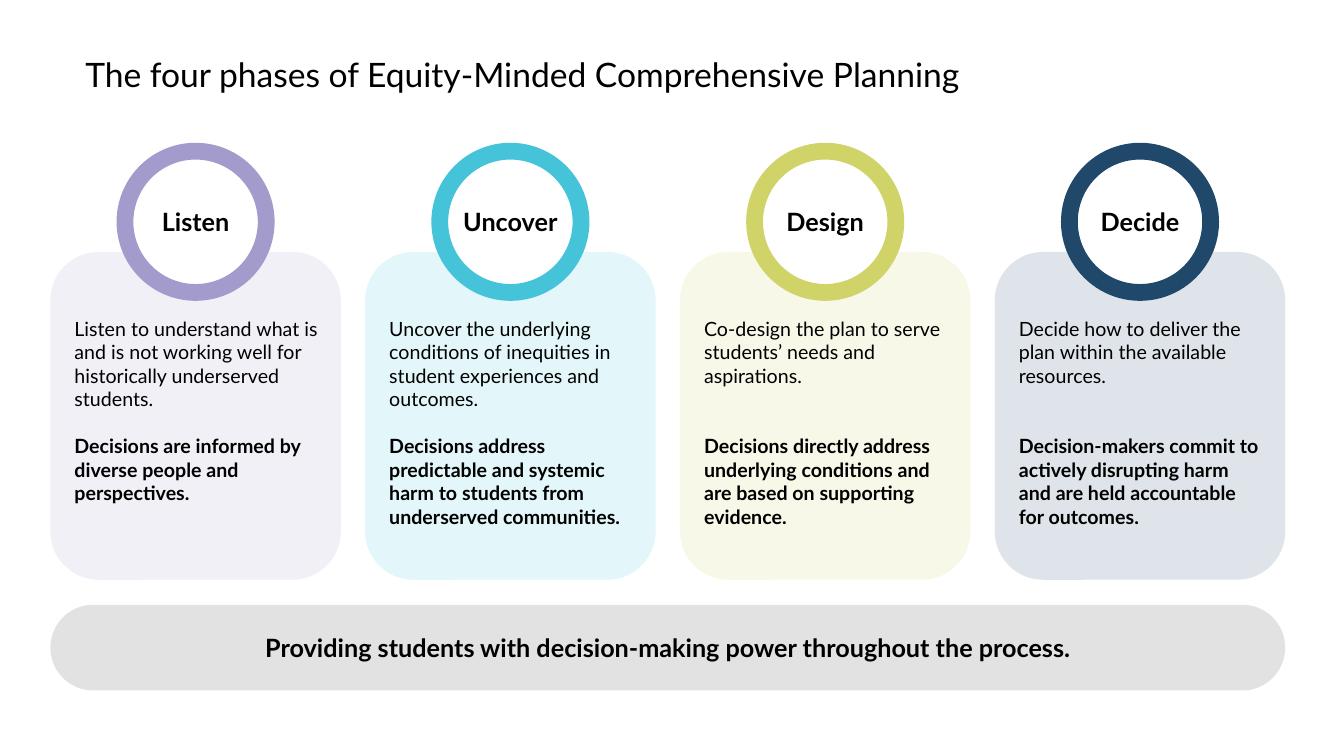
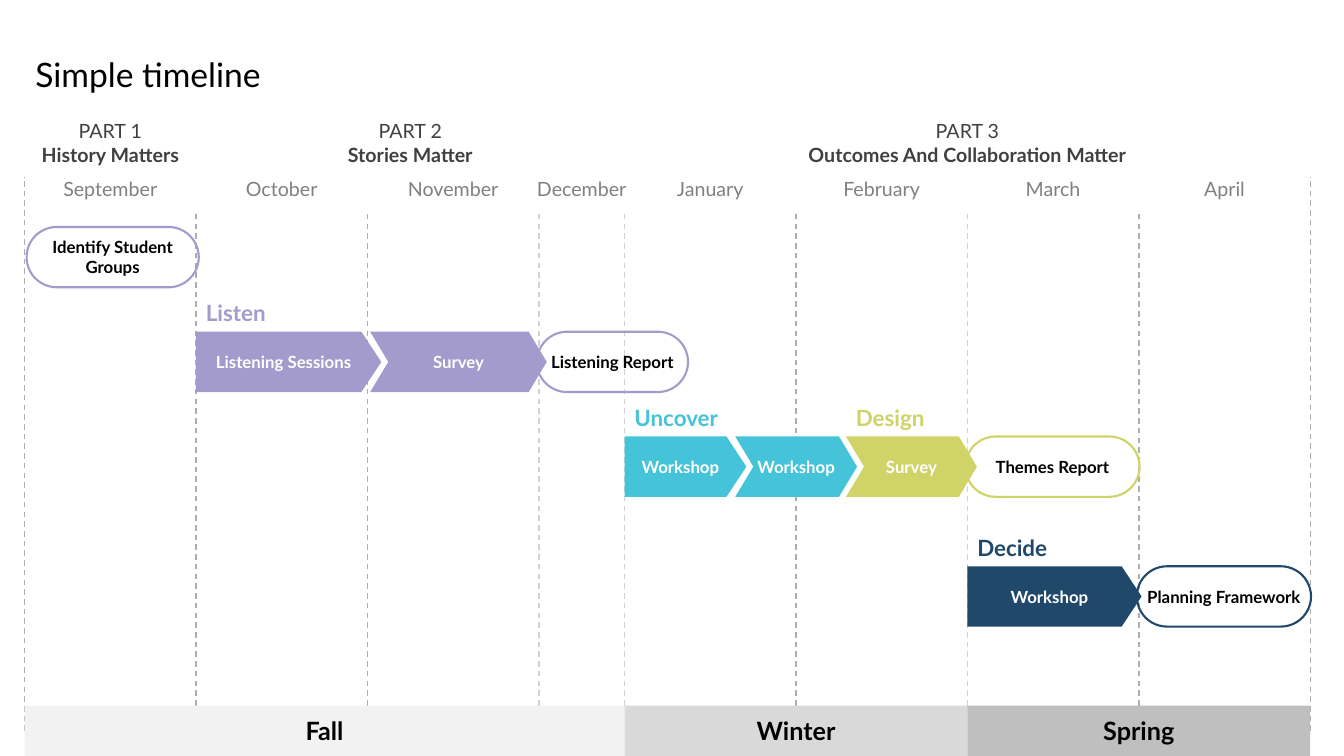
from itertools import accumulate

from lxml import etree
from pptx import Presentation
from pptx.dml.color import RGBColor
from pptx.enum.dml import MSO_LINE
from pptx.enum.shapes import MSO_CONNECTOR, MSO_SHAPE
from pptx.enum.text import MSO_ANCHOR, PP_ALIGN
from pptx.oxml.ns import qn
from pptx.util import Cm, Pt

RECTANGLE = MSO_SHAPE.RECTANGLE
ROUNDED = MSO_SHAPE.ROUNDED_RECTANGLE
ELLIPSE = MSO_SHAPE.OVAL
PENTAGON = MSO_SHAPE.PENTAGON
CHEVRON = MSO_SHAPE.CHEVRON
STRAIGHT = MSO_CONNECTOR.STRAIGHT
DASH = MSO_LINE.DASH
TOP, MIDDLE = MSO_ANCHOR.TOP, MSO_ANCHOR.MIDDLE
LEFT, CENTER = PP_ALIGN.LEFT, PP_ALIGN.CENTER

# Shared look: all lengths are centimetres
FONT = "Lato"
BLACK, WHITE = "000000", "FFFFFF"
HEADING_GREY, MONTH_GREY = "404040", "808080"
PHASE_COLOURS = {"Listen": "A29BCB", "Uncover": "45C3D8",
                 "Design": "CFD368", "Decide": "20486B"}
NO_INSETS = (0, 0, 0, 0)
USUAL_INSETS = (0.25, 0.13, 0.25, 0.13)

# Phase cards: name, fill, opacity, blank lines between texts, texts
CARDS = [
    ("Listen", "F1F0F7", 100, 1,
     "Listen to understand what is and is not working well for "
     "historically underserved students.",
     "Decisions are informed by diverse people and perspectives."),
    ("Uncover", "E3F6F9", 100, 1,
     "Uncover the underlying conditions of inequities in student "
     "experiences and outcomes.",
     "Decisions address predictable and systemic harm to students from "
     "underserved communities."),
    ("Design", "CFD368", 15, 2,
     "Co-design the plan to serve students’ needs and aspirations.",
     "Decisions directly address underlying conditions and are based on "
     "supporting evidence."),
    ("Decide", "DEE4E9", 100, 2,
     "Decide how to deliver the plan within the available resources.",
     "Decision-makers commit to actively disrupting harm and are held "
     "accountable for outcomes."),
]
CARD_TEXT_SIZE = 14
LINE_HEIGHT = 1.2 * CARD_TEXT_SIZE

# Timeline grid: a month is one column, December half of one
MONTHS = [("September", 1), ("October", 1), ("November", 1), ("December", 0.5),
          ("January", 1), ("February", 1), ("March", 1), ("April", 1)]
MONTH_WIDTH = 4.32
EDGES = list(accumulate((share * MONTH_WIDTH for _, share in MONTHS),
                        initial=0.62))
PALE_EDGES = (3, 4, 6)

# Spans run from one grid edge to another
PARTS = [("PART 1", "History Matters", 0, 1),
         ("PART 2", "Stories Matter", 1, 4),
         ("PART 3", "Outcomes And Collaboration Matter", 4, 8)]
SEASONS = [("Fall", "F2F2F2", 0, 4),
           ("Winter", "D9D9D9", 4, 6),
           ("Spring", "BFBFBF", 6, 8)]
SEASON_TOP, SEASON_HEIGHT = 17.78, 1.27

# Work rows: top, first edge, arrows (phase, text, width),
# report (text, edge, width)
ROWS = [
    (8.36, 1, [("Listen", "Listening Sessions", 4.67),
               ("Listen", "Survey", 4.45)],
     ("Listening Report", 3, 3.81)),
    (11, 4, [("Uncover", "Workshop", 3.07), ("Uncover", "Workshop", 3.07),
             ("Design", "Survey", 3.3)],
     ("Themes Report", 6, 4.39)),
    (14.27, 6, [("Decide", "Workshop", 4.39)],
     ("Planning Framework", 7, 4.39)),
]
STEP_HEIGHT = 1.52
ARROW_OVERLAP = 0.28
LABEL_HEIGHT = 0.94


def colour(value):
    return RGBColor.from_string(value)


def lengths(box):
    return [Cm(value) for value in box]


def write(shape, texts, size, text_colour=BLACK, bold=(True,), align=CENTER,
          anchor=MIDDLE, insets=NO_INSETS, gap=0):
    """Write one paragraph per text, with a gap in points between them."""
    frame = shape.text_frame
    frame.word_wrap = True
    frame.vertical_anchor = anchor
    (frame.margin_left, frame.margin_top,
     frame.margin_right, frame.margin_bottom) = lengths(insets)
    for number, (text, is_bold) in enumerate(zip(texts, bold)):
        para = frame.add_paragraph() if number else frame.paragraphs[0]
        para.text = text
        para.alignment = align
        if number and gap:
            para.space_before = Pt(gap)
        font = para.runs[0].font
        font.name, font.size, font.bold = FONT, Pt(size), is_bold
        font.color.rgb = colour(text_colour)


def add_text(page, box, texts, size, **style):
    write(page.shapes.add_textbox(*lengths(box)), texts, size, **style)


def add_panel(page, kind, box, fill=None, opacity=100, line=None,
              line_width=1.5, adjust=None):
    panel = page.shapes.add_shape(kind, *lengths(box))
    panel.shadow.inherit = False
    if adjust is not None:
        panel.adjustments[0] = adjust
    if fill:
        panel.fill.solid()
        panel.fill.fore_color.rgb = colour(fill)
        if opacity < 100:
            tint = panel._element.spPr.find(qn("a:solidFill"))[0]
            etree.SubElement(tint, qn("a:alpha"), val=str(opacity * 1000))
    else:
        panel.fill.background()
    if line:
        panel.line.color.rgb = colour(line)
        panel.line.width = Pt(line_width)
    else:
        panel.line.fill.background()
    return panel


def add_title(page, left, text):
    add_text(page, (left, 1.27, 28.19, 1.22), [text], 24, bold=(False,),
             align=LEFT, anchor=TOP, insets=(0.25, 0.1, 0.18, 0.1))


def add_phase_card(page, box, name, fill, opacity, blank_lines, *texts):
    left, top, width, _ = box
    card = add_panel(page, ROUNDED, box, fill, opacity)
    write(card, texts, CARD_TEXT_SIZE, bold=(False, True), align=LEFT,
          anchor=TOP, insets=(0.25, 1.27, 0.13, 0.13),
          gap=blank_lines * LINE_HEIGHT)
    # Ring centred over the card's top edge
    diameter = 3.56
    ring = add_panel(page, ELLIPSE, (left + (width - diameter) / 2, top - 2.54,
                                     diameter, diameter),
                     WHITE, line=PHASE_COLOURS[name], line_width=12)
    write(ring, [name], 18)


def build_phases(page):
    add_title(page, 1.9, "The four phases of Equity-Minded Comprehensive "
                         "Planning")
    left, total, card_width = 1.27, 31.12, 7.32
    pitch = (total - card_width) / (len(CARDS) - 1)
    for number, card in enumerate(CARDS):
        add_phase_card(page, (left + number * pitch, 6.35, card_width, 8.26),
                       *card)
    band = add_panel(page, ROUNDED, (left, 15.24, total, 2.16), "D9D9D9", 75,
                     adjust=0.5)
    write(band, ["Providing students with decision-making power throughout "
                 "the process."], 18)


def add_grid_line(page, x, bottom, top, line_colour):
    line = page.shapes.add_connector(STRAIGHT,
                                     *lengths((x, bottom, x, top)))
    line.line.color.rgb = colour(line_colour)
    line.line.width = Pt(1)
    line.line.dash_style = DASH
    etree.SubElement(line._element.spPr, qn("a:effectLst"))


def add_calendar(page):
    # Month boundaries; the outer two are taller
    for number, x in enumerate(EDGES):
        outer = number in (0, len(EDGES) - 1)
        bottom, top = (18.42, 4.45) if outer else (SEASON_TOP, 5.33)
        add_grid_line(page, x, bottom, top,
                      "D1D1D1" if number in PALE_EDGES else "AEAEAE")
    # Part headings and month names
    for part, name, first, last in PARTS:
        add_text(page, (EDGES[first], 2.9, EDGES[last] - EDGES[first], 1.4),
                 [part, name], 14, text_colour=HEADING_GREY,
                 bold=(False, True))
    spill = 0.3
    for (month, share), x in zip(MONTHS, EDGES):
        add_text(page, (x - spill, 4.32, share * MONTH_WIDTH + 2 * spill, 0.86),
                 [month], 14, text_colour=MONTH_GREY, bold=(False,))
    # Season bands
    for season, fill, first, last in SEASONS:
        band = add_panel(page, RECTANGLE,
                         (EDGES[first], SEASON_TOP,
                          EDGES[last] - EDGES[first], SEASON_HEIGHT), fill)
        write(band, [season], 18)


def add_pill(page, left, top, width, text, line):
    pill = add_panel(page, ROUNDED, (left, top, width, STEP_HEIGHT), line=line,
                     adjust=0.5)
    write(pill, [text], 12)


def add_work_row(page, top, first_edge, arrows, report):
    # The report goes first, so that the last arrow tip lies over it
    text, edge, width = report
    add_pill(page, EDGES[edge] - 0.05, top, width, text,
             PHASE_COLOURS[arrows[-1][0]])
    left, previous = EDGES[first_edge], None
    for phase, text, width in arrows:
        fill = PHASE_COLOURS[phase]
        if phase != previous:
            add_text(page, (left, top - LABEL_HEIGHT, 3, LABEL_HEIGHT),
                     [phase], 16, text_colour=fill, align=LEFT, anchor=TOP,
                     insets=USUAL_INSETS)
        kind, point = (CHEVRON, 0.3) if previous else (PENTAGON, 0.33)
        arrow = add_panel(page, kind, (left, top, width, STEP_HEIGHT), fill,
                          adjust=point)
        write(arrow, [text], 12, text_colour=WHITE)
        left += width - ARROW_OVERLAP
        previous = phase


def build_timeline(page):
    add_title(page, 0.64, "Simple timeline")
    add_calendar(page)
    add_pill(page, EDGES[0] + 0.05, 5.72, 4.34, "Identify Student Groups",
             PHASE_COLOURS["Listen"])
    for row in ROWS:
        add_work_row(page, *row)


def main():
    deck = Presentation()
    deck.slide_width, deck.slide_height = Cm(33.87), Cm(19.05)
    for build in (build_phases, build_timeline):
        build(deck.slides.add_slide(deck.slide_layouts[6]))
    deck.save("out.pptx")


if __name__ == "__main__":
    main()
